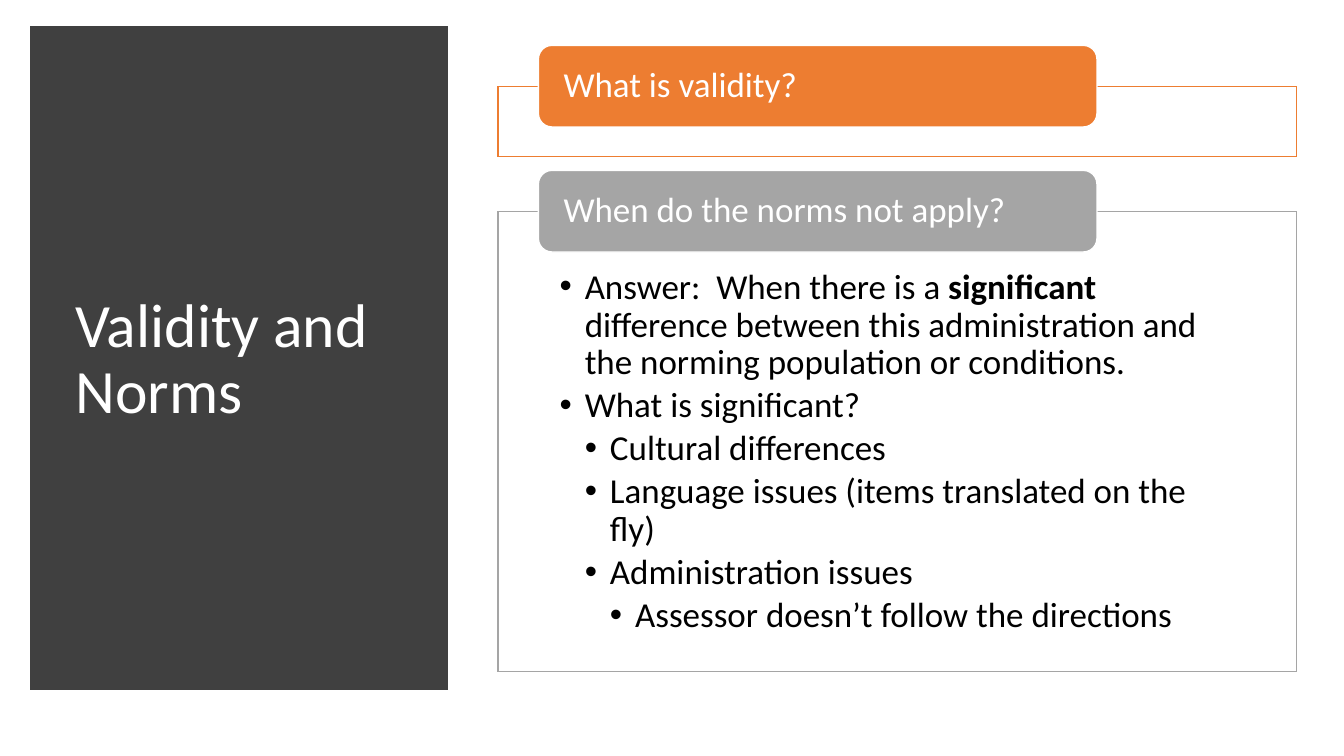
"""Build the "Validity and Norms" slide: a dark title panel beside two headed frames."""
from lxml import etree
from pptx import Presentation
from pptx.dml.color import RGBColor
from pptx.enum.shapes import MSO_SHAPE
from pptx.enum.text import MSO_ANCHOR, PP_ALIGN
from pptx.oxml.ns import qn
from pptx.util import Emu, Pt

TITLE = "Validity and Norms"
SECTIONS = [
    ("What is validity?", []),
    ("When do the norms not apply?", [
        (1, [("Answer:  When there is a ", False), ("significant", True),
             (" difference between this administration and the norming"
              " population or conditions.", False)]),
        (1, [("What is significant?", False)]),
        (2, [("Cultural differences", False)]),
        (2, [("Language issues (items translated on the fly)", False)]),
        (2, [("Administration issues", False)]),
        (3, [("Assessor doesn’t follow the directions", False)]),
    ]),
]

PX = 9144
FONT = "Calibri"
TITLE_PT, BODY_PT = 44, 25
WHITE = RGBColor(0xFF, 0xFF, 0xFF)
BLACK = RGBColor(0, 0, 0)
DARK = RGBColor(0x40, 0x40, 0x40)
ORANGE = RGBColor(0xED, 0x7D, 0x31)
GRAY = RGBColor(0xA5, 0xA5, 0xA5)
ACCENTS = [ORANGE, GRAY]
RECT, ROUND = MSO_SHAPE.RECTANGLE, MSO_SHAPE.ROUNDED_RECTANGLE
TOP, MIDDLE, LEFT = MSO_ANCHOR.TOP, MSO_ANCHOR.MIDDLE, PP_ALIGN.LEFT

PANEL = (37, 33, 400, 645)
TITLE_BOX = (65, 70, 346, 575)
FRAME_X, FRAME_W, FRAME_Y = 494, 792, 86
FRAME_HEIGHTS = [69, 456]
HEADER_X, HEADER_W, HEADER_H = 534, 554, 81
HEADER_RISE, FRAME_GAP = 41, 55
INDENT = 25


def px(n):
    return Emu(n * PX)


def add_box(s, kind, box, fill, line, width):
    sp = s.shapes.add_shape(kind, *map(px, box))
    sp.shadow.inherit = False
    sp.fill.solid()
    sp.fill.fore_color.rgb = fill
    sp.line.color.rgb = line
    sp.line.width = Pt(width)
    etree.SubElement(sp.line._get_or_add_ln(), qn("a:miter"), lim="800000")
    return sp


def set_frame(sp, anchor, insets):
    tf = sp.text_frame
    tf.word_wrap = True
    tf.vertical_anchor = anchor
    (tf.margin_left, tf.margin_top,
     tf.margin_right, tf.margin_bottom) = map(px, insets)
    return tf


def add_runs(p, runs, size, color):
    p.alignment = LEFT
    p.line_spacing = 0.9
    for text, bold in runs:
        r = p.add_run()
        r.text = text
        r.font.name = FONT
        r.font.size = Pt(size)
        r.font.bold = bold
        r.font.color.rgb = color


def add_bullet(p, level):
    p.level = level
    p.space_after = Pt(3.75)
    pPr = p._p.get_or_add_pPr()
    pPr.set("marL", str(px(INDENT * level)))
    pPr.set("indent", str(px(-INDENT)))
    etree.SubElement(pPr, qn("a:buFont"), typeface="Arial")
    etree.SubElement(pPr, qn("a:buChar"), char="•")


def add_section(s, y, height, accent, heading, bullets):
    frame = add_box(s, RECT, (FRAME_X, y, FRAME_W, height), WHITE, accent, 1)
    color = frame.fill._xPr.find(qn("a:solidFill"))[0]
    etree.SubElement(color, qn("a:alpha"), val="90000")
    tf = set_frame(frame, TOP, (61, 57, 61, 19))
    for i, (level, runs) in enumerate(bullets):
        p = tf.add_paragraph() if i else tf.paragraphs[0]
        add_runs(p, runs, BODY_PT, BLACK)
        add_bullet(p, level)
    header = add_box(s, ROUND, (HEADER_X, y - HEADER_RISE, HEADER_W, HEADER_H),
                     accent, WHITE, 1)
    tf = set_frame(header, MIDDLE, (21, 0, 21, 0))
    add_runs(tf.paragraphs[0], [(heading, False)], BODY_PT, WHITE)


def main():
    prs = Presentation()
    prs.slide_width, prs.slide_height = px(1333), px(750)
    s = prs.slides.add_slide(prs.slide_layouts[6])
    add_box(s, RECT, PANEL, DARK, DARK, 10)
    title = s.shapes.add_textbox(*map(px, TITLE_BOX))
    tf = set_frame(title, MIDDLE, (10, 5, 10, 5))
    add_runs(tf.paragraphs[0], [(TITLE, False)], TITLE_PT, WHITE)
    y = FRAME_Y
    for (heading, bullets), height, accent in zip(SECTIONS, FRAME_HEIGHTS, ACCENTS):
        add_section(s, y, height, accent, heading, bullets)
        y += height + FRAME_GAP
    prs.save("out.pptx")


if __name__ == "__main__":
    main()
